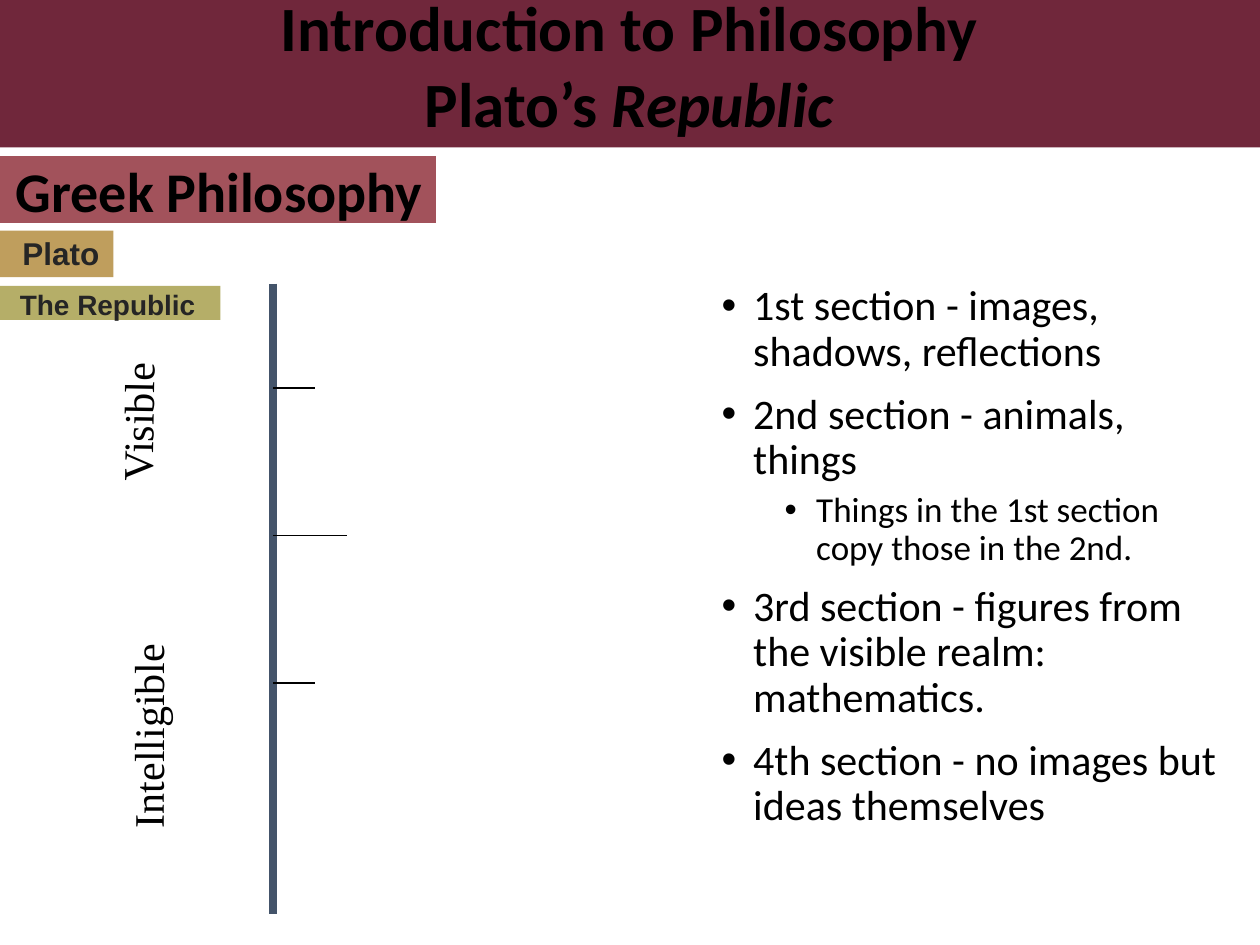
"""Build a slide on the divided line in Plato's Republic."""
from typing import NamedTuple

from lxml.etree import SubElement
from pptx import Presentation
from pptx.dml.color import RGBColor
from pptx.enum.shapes import MSO_CONNECTOR, MSO_SHAPE
from pptx.enum.text import MSO_ANCHOR, MSO_AUTO_SIZE, PP_ALIGN
from pptx.oxml.ns import qn
from pptx.util import Inches, Pt

COLORS = {
    "black": "000000", "ink": "252525", "slate": "44546A", "wine": "70273B",
    "rose": "A2525B", "gold": "BF9E5D", "olive": "B5AE68",
}


class Box(NamedTuple):
    left: float
    top: float
    width: float
    height: float


class Band(NamedTuple):
    box: Box
    color: str


class Rule(NamedTuple):
    start: tuple[float, float]
    end: tuple[float, float]
    color: str = "black"
    weight: float = 1


class Label(NamedTuple):
    text: str
    box: Box
    size: float
    font: str
    color: str = "black"
    bold: bool = True
    align: PP_ALIGN = PP_ALIGN.LEFT
    wrap: bool = True
    turn: float = 0


class Point(NamedTuple):
    text: str
    level: int = 0


AXIS = 2.17
RULES = [
    Rule((AXIS, 2.25), (AXIS, 7.25), "slate", 4.5),
    Rule((AXIS, 4.25), (2.75, 4.25)),
    Rule((AXIS, 3.08), (2.5, 3.08)),
    Rule((AXIS, 5.42), (2.5, 5.42)),
]
BANDS = [
    Band(Box(0, -0.07, 10, 1.24), "wine"),
    Band(Box(0, 1.24, 3.46, 0.53), "rose"),
    Band(Box(0, 1.83, 0.9, 0.37), "gold"),
    Band(Box(0, 2.27, 1.75, 0.27), "olive"),
]
LABELS = [
    Label("Visible", Box(0.38, 2.96, 1.42, 0.5), 24, "Times New Roman",
          bold=False, turn=271),
    Label("Intelligible", Box(0.21, 5.46, 1.92, 0.5), 24, "Times New Roman",
          bold=False, turn=270.1),
    Label("Greek Philosophy", Box(0.02, 1.19, 3.44, 0.64), 32, "Calibri",
          align=PP_ALIGN.CENTER),
    Label("Plato", Box(0.08, 1.81, 0.82, 0.4), 18, "Arial", "ink", wrap=False),
    Label("The Republic", Box(0.06, 2.23, 1.61, 0.37), 16, "Arial", "ink",
          wrap=False),
]
POINTS = [
    Point("1st section - images, shadows, reflections"),
    Point("2nd section - animals, things"),
    Point("Things in the 1st section copy those in the 2nd.", 1),
    Point("3rd section - figures from the visible realm: mathematics."),
    Point("4th section - no images but ideas themselves"),
]


def rgb(name: str) -> RGBColor:
    return RGBColor.from_string(COLORS[name])


def place(box: Box) -> list[int]:
    return [Inches(side) for side in box]


def write(par, text: str, *, size: float, font: str = "Calibri",
          color: str = "black", bold: bool = False, italic: bool = False) -> None:
    run = par.add_run()
    run.text = text
    face = run.font
    face.size, face.name = Pt(size), font
    face.bold, face.italic = bold, italic
    face.color.rgb = rgb(color)


def draw_rule(slide, rule: Rule) -> None:
    ends = [Inches(n) for n in (*rule.start, *rule.end)]
    line = slide.shapes.add_connector(MSO_CONNECTOR.STRAIGHT, *ends)
    line.line.color.rgb = rgb(rule.color)
    line.line.width = Pt(rule.weight)
    SubElement(line._element.spPr, qn("a:effectLst"))


def draw_band(slide, band: Band) -> None:
    shape = slide.shapes.add_shape(MSO_SHAPE.RECTANGLE, *place(band.box))
    shape.shadow.inherit = False
    shape.fill.solid()
    shape.fill.fore_color.rgb = rgb(band.color)
    shape.line.fill.background()


def draw_label(slide, label: Label) -> None:
    shape = slide.shapes.add_textbox(*place(label.box))
    shape.rotation = label.turn
    shape.text_frame.word_wrap = label.wrap
    par = shape.text_frame.paragraphs[0]
    par.alignment = label.align
    write(par, label.text, size=label.size, font=label.font,
          color=label.color, bold=label.bold)


def draw_points(slide, box: Box, points: list[Point]) -> None:
    frame = slide.shapes.add_textbox(*place(box)).text_frame
    frame.word_wrap = True
    for spot, point in enumerate(points):
        par = frame.add_paragraph() if spot else frame.paragraphs[0]
        par.level = point.level
        par.line_spacing = 0.9
        par.space_before = Pt(5 if point.level else 10)
        props = par._p.get_or_add_pPr()
        props.set("marL", str(Inches(0.25 + 0.5 * point.level)))
        props.set("indent", str(Inches(-0.25)))
        SubElement(props, qn("a:buFont"), typeface="Arial")
        SubElement(props, qn("a:buChar"), char="•")
        write(par, point.text, size=20 if point.level else 24)


def draw_title(slide, box: Box) -> None:
    title = slide.shapes.title
    title.left, title.top, title.width, title.height = place(box)
    frame = title.text_frame
    frame.word_wrap = True
    frame.auto_size = MSO_AUTO_SIZE.NONE
    frame.vertical_anchor = MSO_ANCHOR.TOP
    first, second = frame.paragraphs[0], frame.add_paragraph()
    first.alignment = second.alignment = PP_ALIGN.CENTER
    write(first, "Introduction to Philosophy", size=36, bold=True)
    write(second, "Plato’s ", size=36, bold=True)
    write(second, "Republic", size=36, bold=True, italic=True)
    slide.shapes._spTree.append(title._element)


def main() -> None:
    deck = Presentation()
    deck.slide_width, deck.slide_height = Inches(10), Inches(7.5)
    slide = deck.slides.add_slide(deck.slide_layouts[5])
    draw_points(slide, Box(5.63, 2.21, 4.17, 4.5), POINTS)
    for rule in RULES:
        draw_rule(slide, rule)
    for band in BANDS:
        draw_band(slide, band)
    for label in LABELS:
        draw_label(slide, label)
    draw_title(slide, Box(1.17, -0.14, 7.65, 1.31))
    deck.save("out.pptx")


if __name__ == "__main__":
    main()
